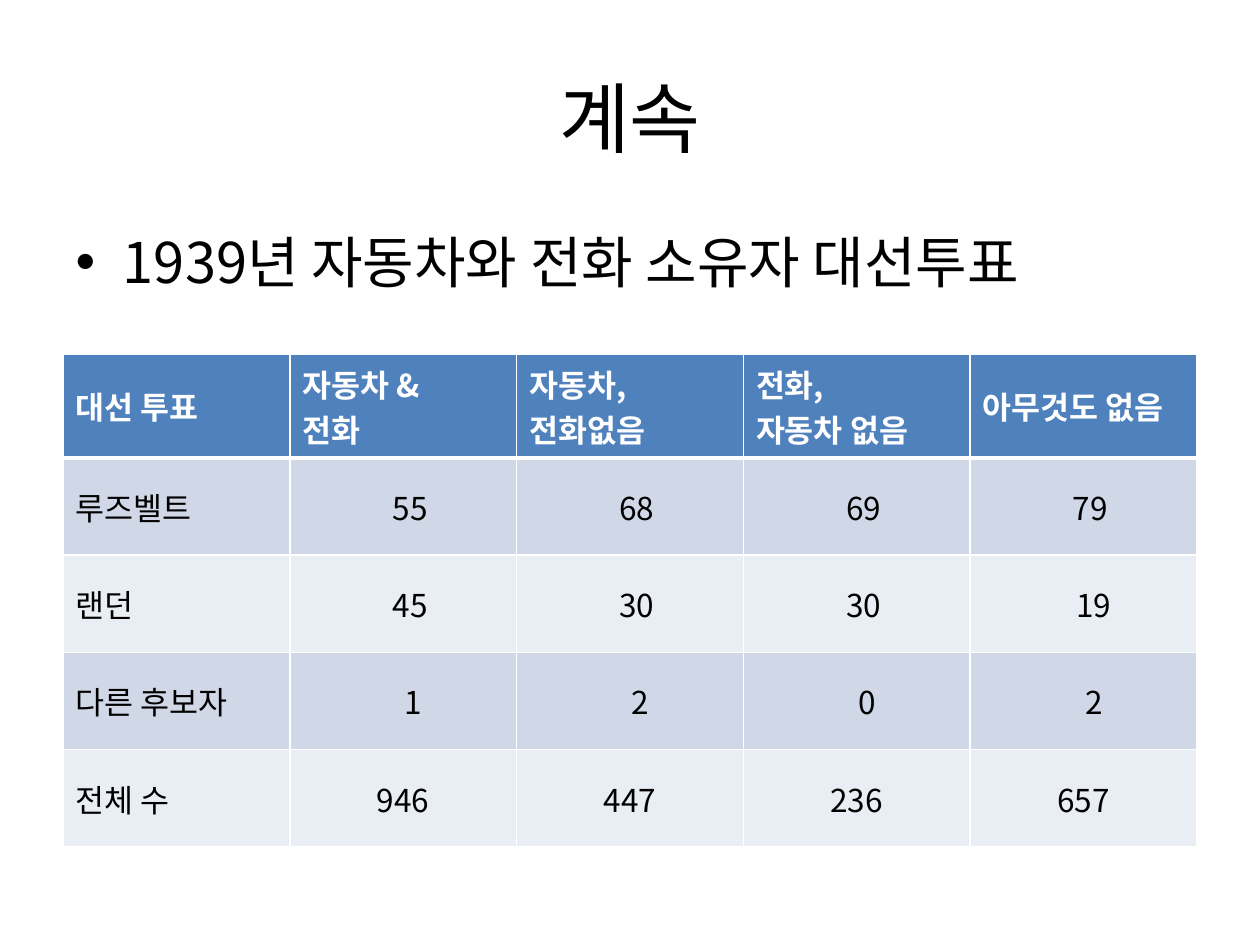
"""Build a slide with a table of presidential votes by car and telephone ownership."""
from lxml.etree import SubElement
from pptx import Presentation
from pptx.dml.color import RGBColor
from pptx.enum.text import MSO_ANCHOR as Anchor, PP_ALIGN as Align
from pptx.oxml import parse_xml
from pptx.oxml.ns import nsdecls, qn
from pptx.util import Cm, Pt

FONT = "Noto Sans CJK KR"


def style(paragraph, size, color="000000", bold=False, align=Align.LEFT):
    paragraph.alignment = align
    font = paragraph.font
    font.name, font.size, font.bold = FONT, Pt(size), bold
    font.color.rgb = RGBColor.from_string(color)
    defaults = paragraph._p.pPr.find(qn("a:defRPr"))
    SubElement(defaults, qn("a:ea")).set("typeface", FONT)


def border(cell, widths):
    for position, (side, width) in enumerate(zip("LRTB", widths)):
        line = parse_xml(
            f'<a:ln{side} {nsdecls("a")} w="{Pt(width)}"><a:solidFill>'
            f'<a:srgbClr val="FFFFFF"/></a:solidFill></a:ln{side}>')
        cell._tc.get_or_add_tcPr().insert(position, line)


prs = Presentation()
prs.slide_width, prs.slide_height = Cm(25.4), Cm(19.05)
slide = prs.slides.add_slide(prs.slide_layouts[1])

title, body = slide.placeholders
title.left, title.top, title.width, title.height = Cm(1.27), Cm(0.76), Cm(22.86), Cm(3.18)
title.text_frame.text = "계속"
title.text_frame.vertical_anchor = Anchor.MIDDLE
style(title.text_frame.paragraphs[0], 44, align=Align.CENTER)

body.left, body.top, body.width, body.height = Cm(1.27), Cm(4.45), Cm(22.86), Cm(12.57)
body.text_frame.text = "1939년 자동차와 전화 소유자 대선투표"
style(body.text_frame.paragraphs[0], 32)

votes = [
    ["대선 투표", "자동차 &\n전화", "자동차,\n전화없음", "전화,\n자동차 없음", "아무것도 없음"],
    ["루즈벨트", "55", "68", "69", "79"],
    ["랜던", "45", "30", "30", "19"],
    ["다른 후보자", "1", "2", "0", "2"],
    ["전체 수", "946", "447", "236", "657"],
]
number_indents = {"1": 0.42, "2": 0.42, "0": 0.42, "19": 0.42,
                  "946": 0, "447": 0, "236": 0, "657": 0}

table = slide.shapes.add_table(
    len(votes), len(votes[0]), Cm(1.27), Cm(7.14), Cm(22.86), Cm(9.8)).table

for r, row in enumerate(votes):
    is_header = r == 0
    fill = "4F81BD" if is_header else ("E9EDF4", "D0D8E8")[r % 2]
    for c, value in enumerate(row):
        cell = table.cell(r, c)
        is_number = not is_header and c > 0
        cell.text = value
        cell.vertical_anchor = Anchor.MIDDLE
        if is_number:
            cell.margin_left = Cm(0.25 + number_indents.get(value, 0.28))
        cell.fill.solid()
        cell.fill.fore_color.rgb = RGBColor.from_string(fill)
        border(cell, (1, 1, 3 if r == 1 else 1, 3 if is_header else 1))
        for paragraph in cell.text_frame.paragraphs:
            style(paragraph, 18, "FFFFFF" if is_header else "000000", is_header,
                  Align.CENTER if is_number else Align.LEFT)

prs.save("out.pptx")
